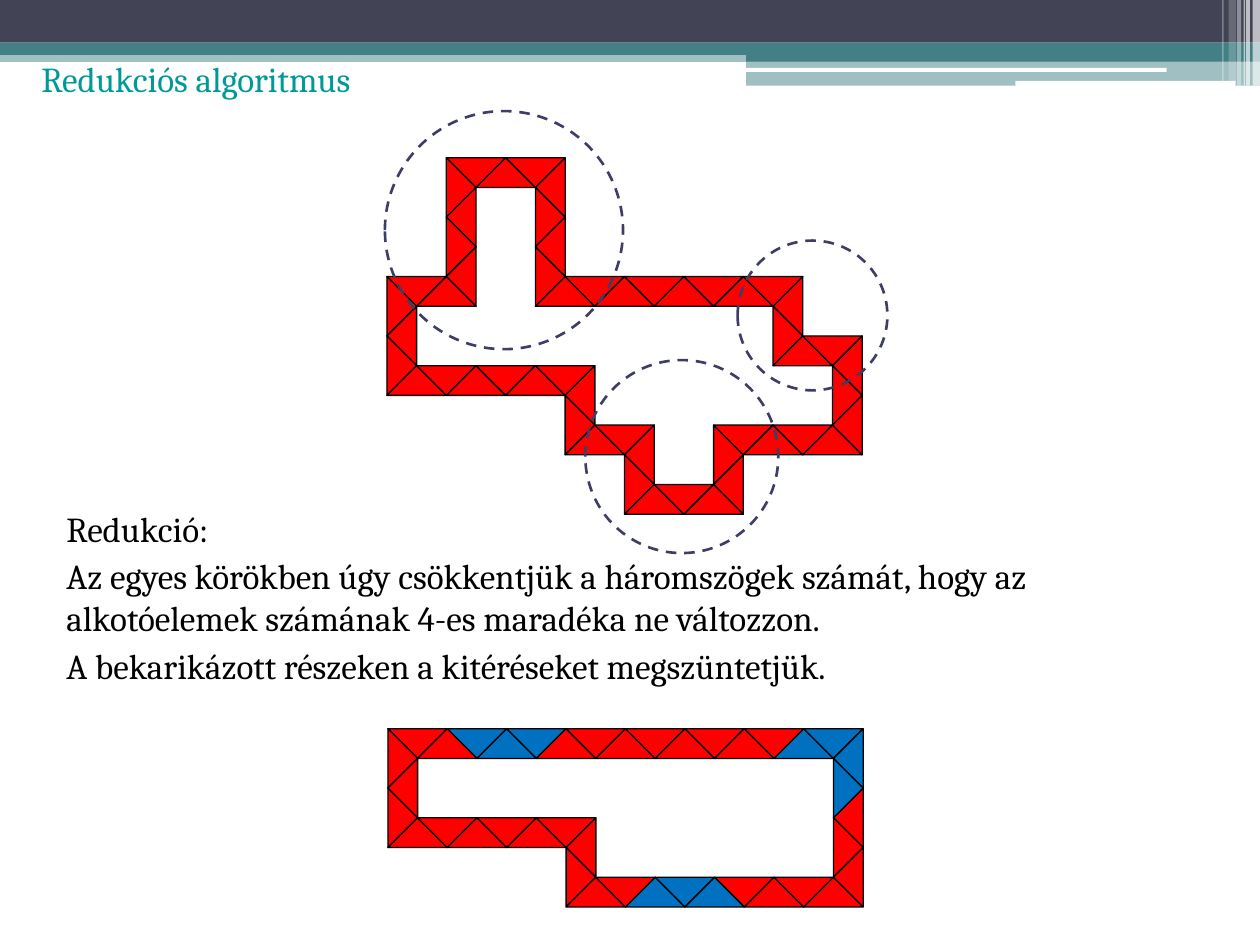
import lxml.etree
import pptx
import pptx.dml.color
import pptx.enum.dml
import pptx.enum.shapes
import pptx.enum.text
import pptx.oxml.ns
import pptx.util

Cm, Pt = pptx.util.Cm, pptx.util.Pt
SHAPE = pptx.enum.shapes.MSO_SHAPE
ANCHOR = pptx.enum.text.MSO_ANCHOR
ALIGN = pptx.enum.text.PP_ALIGN

COLORS = {
    "navy": "424456", "teal": "438086", "white": "FFFFFF", "title": "009999",
    "text": "000000", "red": "FF0000", "blue": "0070C0", "edge": "000000",
    "circle": "3D3E66",
}
FONT = {"name": "Cambria", "size": Pt(20), "bold": False}
UNITS_ACROSS = 16  # grid units across the width of a loop

# Left, top, width, height (cm), colour, opacity in percent
BANDS = [
    (0, 1.02, 25.4, 0.23, "teal", 50),
    (0, 0, 25.4, 0.86, "navy", 100),
    (0, 0.86, 25.4, 0.25, "teal", 100),
    (15.04, 0.99, 10.36, 0.25, "teal", 100),
    (15.04, 1.22, 10.36, 0.51, "teal", 50),
]
PILLS = [
    (15.01, 1.37, 8.51, 0.08, "white", 100),
    (20.47, 1.63, 4.44, 0.1, "white", 100),
]
STRIPES = [
    (25.25, 0, 0.15, 1.73, "white", 65),
    (25.12, 0, 0.08, 1.73, "white", 65),
    (25.07, 0, 0.03, 1.73, "white", 60),
    (24.94, 0, 0.08, 1.73, "white", 40),
    (24.77, 0, 0.15, 1.63, "white", 20),
    (24.64, 0, 0.03, 1.63, "white", 30),
]

# Column, row, number of triangles, colour; a half column marks a vertical strip
FULL_LOOP = [
    (2, 0, 3, "red"), (1.5, 0.5, 4, "red"), (4.5, 0.5, 4, "red"),
    (0, 4, 2, "red"), (-0.5, 4.5, 3, "red"), (0, 7, 6, "red"),
    (5.5, 7.5, 2, "red"), (6, 9, 2, "red"), (7.5, 9.5, 2, "red"),
    (8, 11, 3, "red"), (10.5, 9.5, 2, "red"), (11, 9, 4, "red"),
    (14.5, 6.5, 3, "red"), (12.5, 4.5, 2, "red"), (13, 6, 2, "red"),
    (5, 4, 8, "red"),
]
REDUCED_LOOP = [
    (2, 0, 3, "blue"), (0, 0, 2, "red"), (-0.5, 0.5, 3, "red"),
    (0, 3, 6, "red"), (5.5, 3.5, 2, "red"), (6, 5, 2, "red"),
    (11, 5, 4, "red"), (14.5, 2.5, 3, "red"), (5, 0, 8, "red"),
    (13, 0, 2, "blue"), (14.5, 0.5, 2, "blue"), (8, 5, 3, "blue"),
]
# Left, top, diameter (cm) from the corner of the full loop
CIRCLES = [(-0.04, -0.94, 4.8), (7.07, 1.67, 3.02), (4, 4.08, 3.89)]

PARAGRAPHS = [
    "Redukció:",
    "Az egyes körökben úgy csökkentjük a háromszögek számát, hogy az "
    "alkotóelemek számának 4-es maradéka ne változzon.",
    "A bekarikázott részeken a kitéréseket megszüntetjük.",
]


def rgb(color):
    return pptx.dml.color.RGBColor.from_string(COLORS[color])


def set_format(target, values):
    for attribute, value in values.items():
        setattr(target, attribute, value)


def add_figure(shapes, preset, box, fill=None, opacity=100, line=None):
    """Add a preset shape; line is a colour and a dict of format values."""
    figure = shapes.add_shape(preset, *(Cm(length) for length in box))
    figure.shadow.inherit = False
    if fill:
        figure.fill.solid()
        figure.fill.fore_color.rgb = rgb(fill)
        if opacity < 100:
            solid = figure.fill.fore_color._xFill
            alpha = pptx.oxml.ns.qn("a:alpha")
            lxml.etree.SubElement(solid[0], alpha, val=str(opacity * 1000))
    else:
        figure.fill.background()
    if line:
        figure.line.color.rgb = rgb(line[0])
        set_format(figure.line, line[1])
    else:
        figure.line.fill.background()
    return figure


def add_header(shapes, box):
    left, top = box[:2]
    for preset, parts in ((SHAPE.RECTANGLE, BANDS),
                          (SHAPE.ROUNDED_RECTANGLE, PILLS),
                          (SHAPE.RECTANGLE, STRIPES)):
        for x, y, width, height, color, opacity in parts:
            add_figure(shapes, preset, (left + x, top + y, width, height),
                       color, opacity)


def add_title(title, box):
    for side, length in zip(("left", "top", "width", "height"), box):
        setattr(title, side, Cm(length))
    frame = title.text_frame
    frame.text = "Redukciós algoritmus"
    set_format(frame, {"vertical_anchor": ANCHOR.MIDDLE, "word_wrap": True})
    heading = frame.paragraphs[0]
    heading.alignment = ALIGN.LEFT
    set_format(heading.runs[0].font, FONT)
    heading.runs[0].font.color.rgb = rgb("title")


def add_explanation(shapes, box):
    frame = shapes.add_textbox(*(Cm(length) for length in box)).text_frame
    set_format(frame, {"word_wrap": True, "margin_left": Cm(0.76)})
    for number, sentence in enumerate(PARAGRAPHS):
        paragraph = frame.add_paragraph() if number else frame.paragraphs[0]
        paragraph.space_before = Pt(3)
        run = paragraph.add_run()
        run.text = sentence
        set_format(run.font, FONT)
        run.font.color.rgb = rgb("text")


def add_loop(shapes, box, strips):
    """Place strips of triangles whose direction alternates along the grid."""
    left, top, width = box
    unit = width / UNITS_ACROSS
    loop = shapes.add_group_shape().shapes
    for first_column, first_row, count, color in strips:
        vertical = first_column % 1 != 0
        for step in range(count):
            column = first_column + (0 if vertical else step)
            row = first_row + (step if vertical else 0)
            even = (column + row) % 2 == 0
            triangle = add_figure(
                loop, SHAPE.ISOSCELES_TRIANGLE,
                (left + column * unit, top + row * unit, 2 * unit, unit),
                color, line=("edge", {"width": Pt(0.75)}))
            if vertical:
                triangle.rotation = 90 if even else 270
            else:
                triangle.rotation = 180 if even else 0


def add_circles(shapes, box):
    left, top = box[:2]
    dashed = {"width": Pt(1.5),
              "dash_style": pptx.enum.dml.MSO_LINE.DASH}
    for x, y, diameter in CIRCLES:
        add_figure(shapes, SHAPE.OVAL, (left + x, top + y, diameter, diameter),
                   line=("circle", dashed))


def main():
    deck = pptx.Presentation()
    set_format(deck, {"slide_width": Cm(25.4), "slide_height": Cm(19.05)})
    slide = deck.slides.add_slide(deck.slide_layouts[5])
    shapes = slide.shapes

    # Header and texts
    add_header(shapes, (0, 0))
    add_title(shapes.title, (0.58, 0.71, 14.4, 1.75))
    add_explanation(shapes, (0.58, 10.11, 24.13, 8.15))

    # Full loop with the circled detours, then the reduced loop
    full_box = (7.8, 3.18, 9.58)
    add_loop(shapes, full_box, FULL_LOOP)
    add_circles(shapes, full_box)
    add_loop(shapes, (7.82, 14.69, 9.58), REDUCED_LOOP)

    deck.save("out.pptx")


if __name__ == "__main__":
    main()
